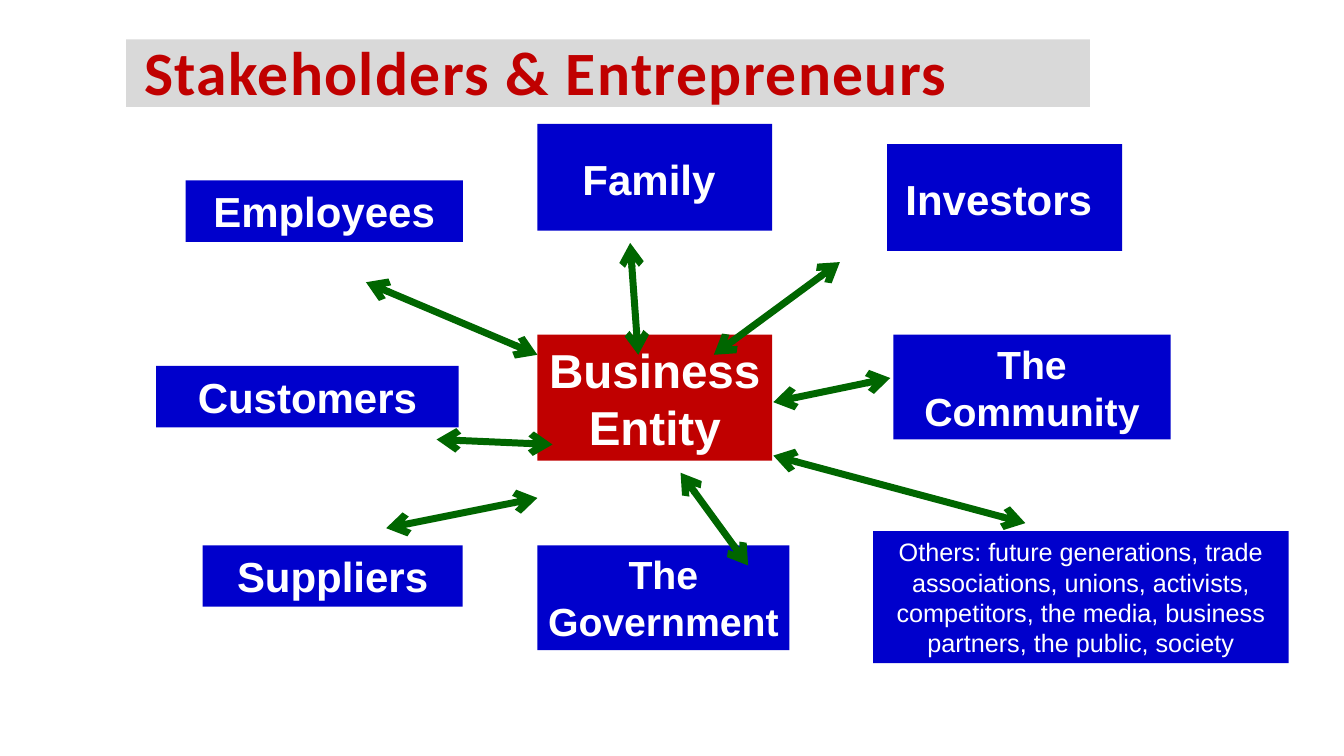
import pptx
import pptx.dml.color
import pptx.enum.shapes
import pptx.enum.text
import pptx.oxml.ns
import pptx.util
from lxml import etree

Inches = pptx.util.Inches
Pt = pptx.util.Pt
qn = pptx.oxml.ns.qn
ANCHOR = pptx.enum.text.MSO_ANCHOR
ALIGN = pptx.enum.text.PP_ALIGN

COLORS = {"hub": "C00000", "stakeholder": "0000CC", "arrow": "006600",
          "band": "D9D9D9", "white": "FFFFFF"}


def rgb(name):
    return pptx.dml.color.RGBColor.from_string(COLORS[name])


def write(shape, text, size=30, font="Arial", color="white", bold=True,
          align=ALIGN.CENTER, anchor=ANCHOR.MIDDLE, margins=(0.1, 0.05, 0.1, 0.05)):
    frame = shape.text_frame
    frame.word_wrap = True
    frame.vertical_anchor = anchor
    (frame.margin_left, frame.margin_top,
     frame.margin_right, frame.margin_bottom) = map(Inches, margins)
    paragraph = frame.paragraphs[0]
    paragraph.alignment = align
    run = paragraph.add_run()
    run.text = text
    run.font.size = Pt(size)
    run.font.name = font
    run.font.bold = bold
    run.font.color.rgb = rgb(color)
    return paragraph


deck = pptx.Presentation()
deck.slide_width = Inches(13.33)
deck.slide_height = Inches(7.5)
slide = deck.slides.add_slide(deck.slide_layouts[5])

# Title band
title = slide.shapes.title
title.left, title.top = Inches(1.25), Inches(0.39)
title.width, title.height = Inches(9.56), Inches(0.67)
title.fill.solid()
title.fill.fore_color.rgb = rgb("band")
heading = write(title, "Stakeholders & Entrepreneurs", size=44, font="Calibri", color="hub",
                align=ALIGN.LEFT, margins=(0.18, 0.09, 0, 0))
heading.line_spacing = 0.8
heading.runs[0].font._element.set("spc", "100")
title.text_frame.auto_size = pptx.enum.text.MSO_AUTO_SIZE.NONE

# Business entity and the stakeholders around it
lowered = {"anchor": ANCHOR.TOP, "margins": (0.1, 0.29, 0.1, 0.05)}
others = ("Others: future generations, trade associations, unions, activists, "
          "competitors, the media, business partners, the public, society")
boxes = [
    ("Business Entity", (5.33, 3.32, 2.33, 1.25), "hub", {"size": 34}),
    ("Family ", (5.33, 1.23, 2.33, 1.06), "stakeholder", lowered),
    ("Investors ", (8.8, 1.43, 2.33, 1.06), "stakeholder", lowered),
    ("The Community", (8.86, 3.32, 2.75, 1.04), "stakeholder", {"size": 28}),
    (others, (8.66, 5.27, 4.12, 1.31), "stakeholder", {"size": 18, "bold": False}),
    ("The Government", (5.33, 5.41, 2.5, 1.04), "stakeholder", {"size": 28}),
    ("Suppliers", (2.01, 5.41, 2.58, 0.61), "stakeholder", {}),
    ("Customers", (1.55, 3.63, 3, 0.61), "stakeholder", {}),
    ("Employees", (1.84, 1.79, 2.75, 0.61), "stakeholder", {}),
]
for label, place, fill, text_format in boxes:
    box = slide.shapes.add_shape(pptx.enum.shapes.MSO_SHAPE.RECTANGLE, *map(Inches, place))
    box.shadow.inherit = False
    box.fill.solid()
    box.fill.fore_color.rgb = rgb(fill)
    box.line.fill.background()
    write(box, label, **text_format)

# Two-way arrows between the entity and each stakeholder
links = [
    (6.25, 2.41, 6.33, 3.52),    # Family
    (7.08, 3.52, 8.33, 2.6),     # Investors
    (7.67, 3.99, 8.83, 3.75),    # Community
    (7.67, 4.52, 10.17, 5.19),   # Others
    (6.75, 4.69, 7.42, 5.61),    # Government
    (3.83, 5.24, 5.33, 4.94),    # Suppliers
    (4.33, 4.36, 5.48, 4.41),    # Customers
    (3.63, 2.8, 5.33, 3.52),     # Employees
]
for ends in links:
    link = slide.shapes.add_connector(pptx.enum.shapes.MSO_CONNECTOR.STRAIGHT,
                                      *map(Inches, ends))
    link.line.color.rgb = rgb("arrow")
    link.line.width = Pt(5)
    outline = link.line._get_or_add_ln()
    for end in ("a:headEnd", "a:tailEnd"):
        etree.SubElement(outline, qn(end), type="arrow")
    etree.SubElement(link._element.spPr, qn("a:effectLst"))

deck.save("out.pptx")
